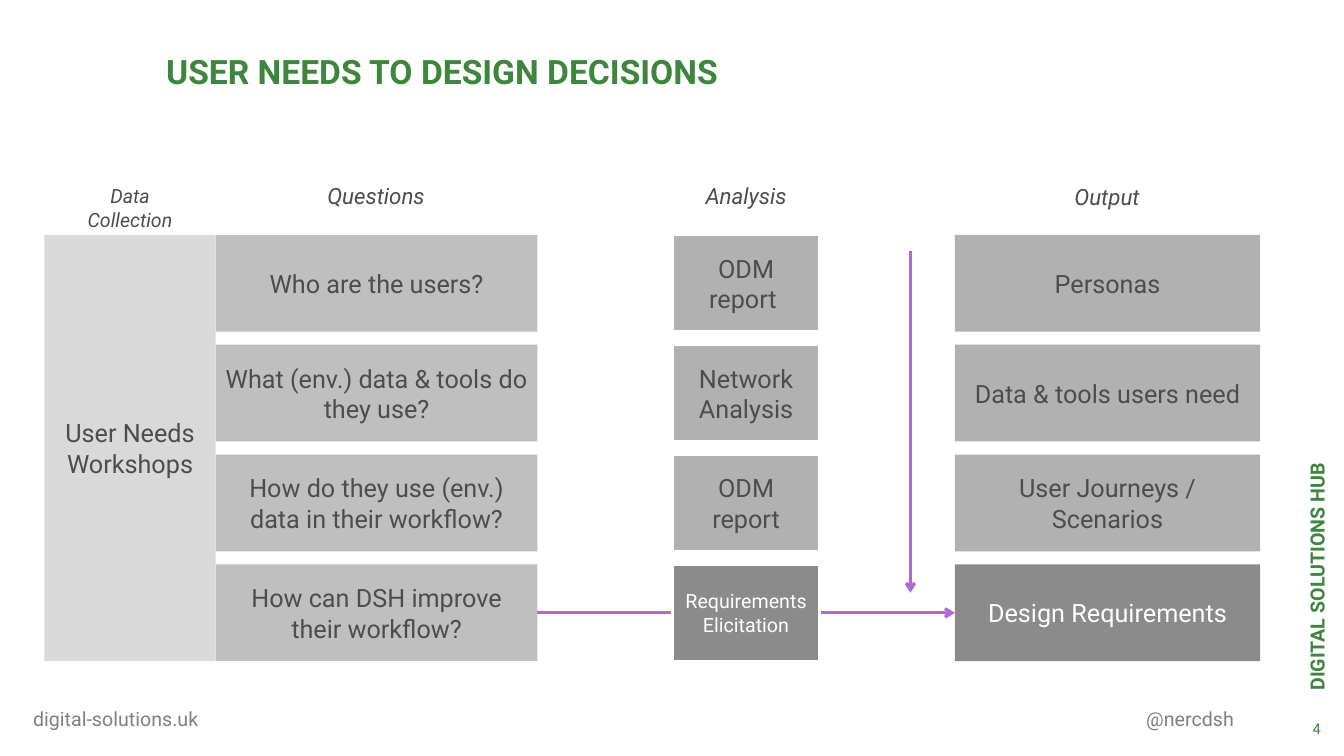
import pptx
import pptx.util
import pptx.dml.color
import pptx.enum.shapes
import pptx.enum.text
import pptx.oxml
import pptx.oxml.ns

Inches = pptx.util.Inches
ALIGN = pptx.enum.text.PP_ALIGN
ANCHOR = pptx.enum.text.MSO_ANCHOR
KIND = pptx.enum.shapes.MSO_SHAPE.RECTANGLE
LINE = pptx.enum.shapes.MSO_CONNECTOR.STRAIGHT

HUES = {
    "green": "3E863E", "mute": "808080", "ink": "4D4D4D", "white": "FFFFFF",
    "pale": "D9D9D9", "light": "BFBFBF", "mid": "B1B1B1", "dark": "8B8B8B",
    "arrow": "AB6BD2",
}

TITLE = "USER NEEDS TO DESIGN DECISIONS"
SOURCE = "User Needs Workshops"
ASKS = [
    "Who are the users?",
    "What (env.) data & tools do they use?",
    "How do they use (env.) data in their workflow?",
    "How can DSH improve their workflow?",
]
STEPS = ["ODM report ", "Network Analysis", "ODM report", "Requirements Elicitation"]
GOALS = ["Personas", "Data & tools users need", "User Journeys / Scenarios", "Design Requirements"]
HEADS = [
    ("Data Collection", 0.56, 1.78, 0.57, 14),
    ("Questions", 3, 1.76, 0.37, 16),
    ("Analysis", 6.67, 1.76, 0.37, 16),
    ("Output", 10.25, 1.77, 0.37, 16),
]
FOOT = [("digital-solutions.uk", 0.23, 2.37), ("@nercdsh", 11.27, 1.23)]

TOP, TALL, PITCH = 2.33, 0.96, 1.09
ASK_X, ASK_W = 2.14, 3.19
STEP_X, STEP_W = 6.67, 1.46
GOAL_X, GOAL_W = 9.47, 3.03

deck = pptx.Presentation()
deck.slide_width = Inches(13.33)
deck.slide_height = Inches(7.5)
slide = deck.slides.add_slide(deck.slide_layouts[6])


def hue(name):
    return pptx.dml.color.RGBColor.from_string(HUES[name])


def fill_in(shape, text, size, tint, align=ALIGN.CENTER, anchor=ANCHOR.MIDDLE, pad=0.05, **style):
    frame = shape.text_frame
    side = Inches(max(pad, 0.1))
    edge = Inches(pad)
    form = {
        "word_wrap": True, "vertical_anchor": anchor,
        "margin_left": side, "margin_right": side,
        "margin_top": edge, "margin_bottom": edge,
    }
    for key, value in form.items():
        setattr(frame, key, value)
    para = frame.paragraphs[0]
    para.alignment = align
    run = para.add_run()
    run.text = text
    looks = {"name": "Roboto", "size": pptx.util.Pt(size), **style}
    for key, value in looks.items():
        setattr(run.font, key, value)
    run.font.color.rgb = hue(tint)


def label(text, spot, size, tint, **form):
    box = slide.shapes.add_textbox(*map(Inches, spot))
    fill_in(box, text, size, tint, **form)
    return box


def block(text, spot, fill, size=18, tint="ink", rim=False):
    box = slide.shapes.add_shape(KIND, *map(Inches, spot))
    box.shadow.inherit = False
    box.fill.solid()
    box.fill.fore_color.rgb = hue(fill)
    if rim:
        box.line.color.rgb = hue("white")
        box.line.width = pptx.util.Pt(2.25)
    else:
        box.line.fill.background()
    fill_in(box, text, size, tint)


def column(texts, left, wide, fill, last=None, end=18, rim=False):
    for row, text in enumerate(texts):
        spot = (left, TOP + row * PITCH, wide, TALL)
        if last and row == len(texts) - 1:
            block(text, spot, last, end, "white", rim)
        else:
            block(text, spot, fill, rim=rim)


def arrow(*ends):
    link = slide.shapes.add_connector(LINE, *map(Inches, ends))
    link.line.color.rgb = hue("arrow")
    link.line.width = pptx.util.Pt(2.25)
    tip = pptx.oxml.ns.qn("a:tailEnd")
    link.line._get_or_add_ln().makeelement(tip)
    ln = link.line._get_or_add_ln()
    ln.append(ln.makeelement(tip, {"type": "arrow"}))
    props = link._element.spPr
    props.append(props.makeelement(pptx.oxml.ns.qn("a:effectLst")))


side = label("DIGITAL SOLUTIONS HUB", (11.56, 5.24, 3, 0.42), 14, "green",
             align=ALIGN.LEFT, pad=0.1, bold=True)
side.rotation = 270
label("4", (12.85, 7.03, 0.42, 0.4), 10.5, "green")
for text, left, wide in FOOT:
    label(text, (left, 6.92, wide, 0.42), 14, "mute", align=ALIGN.LEFT, pad=0.1)
label(TITLE, (1.55, 0.17, 7.92, 0.78), 24, "green",
      align=ALIGN.LEFT, anchor=ANCHOR.BOTTOM, bold=True)

block(SOURCE, (0.44, TOP, 1.7, 3 * PITCH + TALL), "pale")
column(ASKS, ASK_X, ASK_W, "light")
column(GOALS, GOAL_X, GOAL_W, "mid", "dark")
mid = TOP + 3 * PITCH + TALL / 2
arrow(ASK_X + ASK_W, mid, GOAL_X, mid)
column(STEPS, STEP_X, STEP_W, "mid", "dark", 14, True)
arrow(9.03, 2.49, 9.03, 5.88)
for text, left, top, tall, size in HEADS:
    label(text, (left, top, STEP_W, tall), size, "ink", anchor=ANCHOR.TOP, italic=True)

deck.save("out.pptx")
